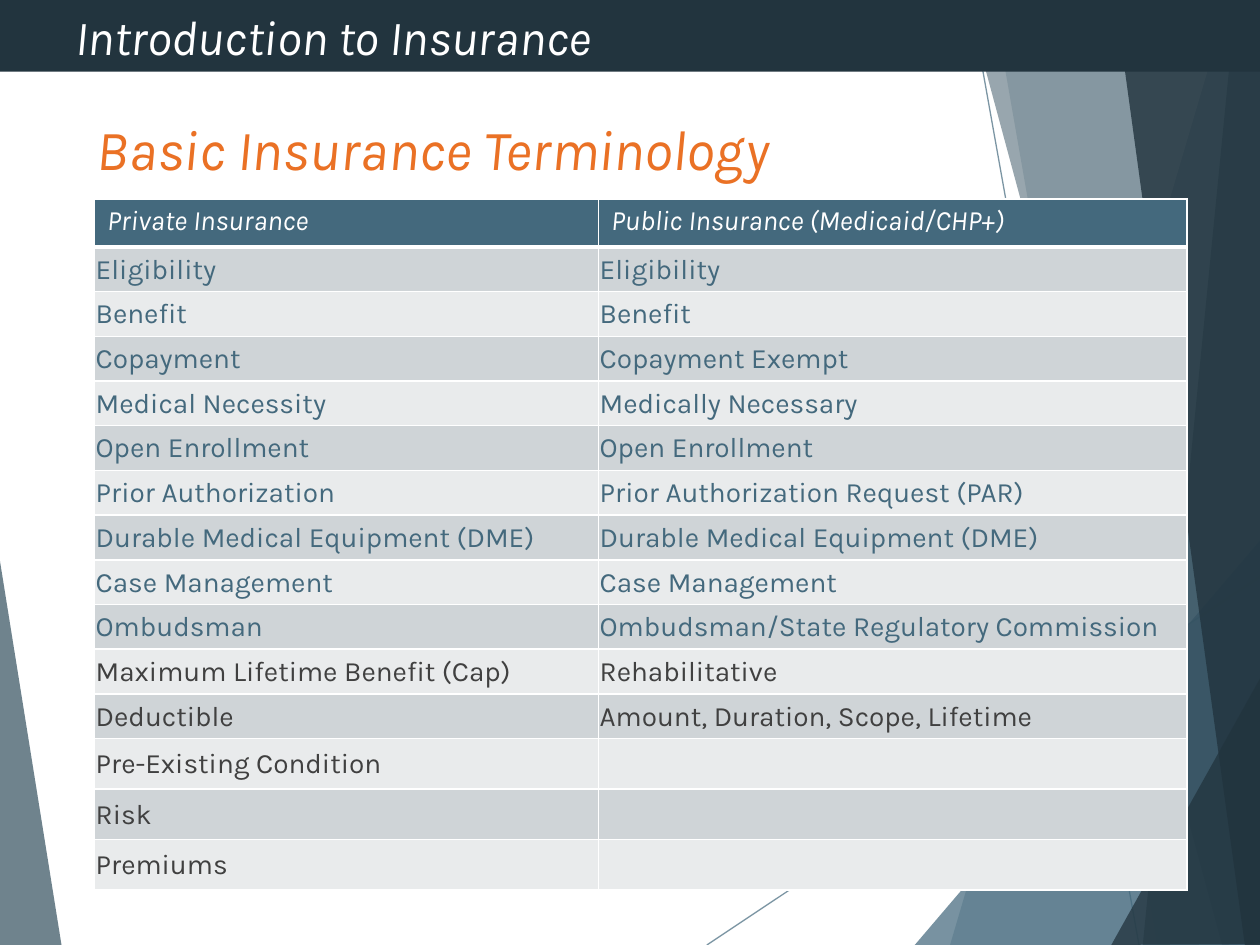
import pptx
import pptx.dml.color
import pptx.enum.shapes
import pptx.enum.text
import pptx.oxml
import pptx.oxml.ns
import pptx.util
from pptx.util import Inches

COLORS = {
    "slate": "44697D", "deep": "334F5E", "night": "22343E", "orange": "EA7125",
    "white": "FFFFFF", "gray": "404040", "band_dark": "CFD4D7", "band_light": "E9EBEC",
}
DRAWING_NS = pptx.oxml.ns.nsdecls("a")
MIDDLE = pptx.enum.text.MSO_ANCHOR.MIDDLE


def rgb(name):
    return pptx.dml.color.RGBColor.from_string(COLORS[name])


def write(frame, text, size, color, italic):
    run = frame.paragraphs[0].add_run()
    run.text = text
    look = {"name": "Karla", "size": pptx.util.Pt(size), "italic": italic, "bold": False}
    for attribute, value in look.items():
        setattr(run.font, attribute, value)
    run.font.color.rgb = rgb(color)


deck = pptx.Presentation()
deck.slide_width, deck.slide_height = Inches(10), Inches(7.5)
slide = deck.slides.add_slide(deck.slide_layouts[6])
shapes = slide.shapes

# Thin background lines
translucent = []
for x1, y1, x2, y2 in [(5.61, 7.5, 10.01, 4.57), (7.7, 0, 9.04, 7.5)]:
    ray = shapes.add_connector(pptx.enum.shapes.MSO_CONNECTOR.STRAIGHT,
                               Inches(x1), Inches(y1), Inches(x2), Inches(y2))
    ray.line.width = pptx.util.Pt(0.75)
    ray.line.color.rgb = rgb("slate")
    ray.element.spPr.append(pptx.oxml.parse_xml(f"<a:effectLst {DRAWING_NS}/>"))
    translucent.append((ray, 70))

# Translucent background facets: color, opacity in percent, corners
facets = [
    ("slate", 36, [(9.75, 0), (7.54, 7.5), (10.02, 7.51), (10.01, 0.01)]),
    ("slate", 20, [(7.88, -0.01), (9.19, 7.5), (10.01, 7.5), (10.01, -0.01)]),
    ("slate", 72, [(7.26, 7.5), (10, 4.29), (10.01, 7.5)]),
    ("deep", 50, [(7.67, -0.01), (9.7, 7.5), (10.01, 7.49), (10.01, -0.01)]),
    ("deep", 66, [(9.81, -0.01), (9.07, 7.5), (10.01, 7.5), (10, -0.01)]),
    ("night", 80, [(8.85, -0.01), (9.88, 7.5), (10.02, 7.5), (10, -0.01)]),
    ("night", 76, [(8.82, 7.5), (10.02, 5.35), (10.02, 7.49)]),
    ("deep", 70, [(-0.01, 4.39), (0.49, 7.51), (-0.01, 7.5)]),
]
for color, opacity, corners in facets:
    start, *others = [(Inches(x), Inches(y)) for x, y in corners]
    outline = shapes.build_freeform(*start)
    outline.add_line_segments(others, close=True)
    facet = outline.convert_to_shape()
    facet.shadow.inherit = False
    facet.fill.solid()
    facet.fill.fore_color.rgb = rgb(color)
    facet.line.fill.background()
    translucent.append((facet, opacity))

for part, opacity in translucent:
    for tint in part.element.xpath("./p:spPr//a:srgbClr"):
        tint.append(pptx.oxml.parse_xml(f'<a:alpha {DRAWING_NS} val="{opacity * 1000}"/>'))

# Banner
banner = shapes.add_shape(pptx.enum.shapes.MSO_SHAPE.RECTANGLE, 0, 0, Inches(10), Inches(0.57))
banner.shadow.inherit = False
banner.fill.solid()
banner.fill.fore_color.rgb = rgb("night")
banner.line.fill.background()
banner.text_frame.vertical_anchor = MIDDLE
banner.text_frame.margin_left = Inches(0.6)
banner.text_frame.paragraphs[0].alignment = pptx.enum.text.PP_ALIGN.LEFT
write(banner.text_frame, "Introduction to Insurance", 28, "white", True)

# Title
title = shapes.add_textbox(Inches(0.67), Inches(0.83), Inches(6.94), Inches(0.69))
title.text_frame.word_wrap = True
title.text_frame.vertical_anchor = MIDDLE
write(title.text_frame, "Basic Insurance Terminology", 32.4, "orange", True)

# Terminology table
terms = [
    ("Private Insurance", "Public Insurance (Medicaid/CHP+)"),
    ("Eligibility", "Eligibility"),
    ("Benefit", "Benefit"),
    ("Copayment", "Copayment Exempt"),
    ("Medical Necessity", "Medically Necessary"),
    ("Open Enrollment", "Open Enrollment"),
    ("Prior Authorization", "Prior Authorization Request (PAR)"),
    ("Durable Medical Equipment (DME)", "Durable Medical Equipment (DME)"),
    ("Case Management", "Case Management"),
    ("Ombudsman", "Ombudsman/State Regulatory Commission"),
    ("Maximum Lifetime Benefit (Cap)", "Rehabilitative"),
    ("Deductible", "Amount, Duration, Scope, Lifetime"),
    ("Pre-Existing Condition", ""),
    ("Risk", ""),
    ("Premiums", ""),
]
FIRST_GRAY_ROW = 10
body_format = {
    "vertical_anchor": MIDDLE, "margin_left": Inches(0.01), "margin_right": Inches(0.01),
    "margin_top": Inches(0.01), "margin_bottom": 0,
}
glossary = shapes.add_table(len(terms), 2, Inches(0.75), Inches(1.58),
                            Inches(8.67), Inches(5.42)).table
glossary.columns[0].width, glossary.columns[1].width = Inches(4), Inches(4.67)

for r, pair in enumerate(terms):
    is_header = r == 0
    glossary.rows[r].height = Inches(0.38 if is_header or not pair[1] else 0.355)
    if is_header:
        band, ink = "slate", "white"
    else:
        band = "band_dark" if r % 2 else "band_light"
        ink = "slate" if r < FIRST_GRAY_ROW else "gray"
    for c, term in enumerate(pair):
        cell = glossary.cell(r, c)
        cell.fill.solid()
        cell.fill.fore_color.rgb = rgb(band)
        if term:
            write(cell.text_frame, term, 16, ink, is_header)
            if not is_header:
                for attribute, value in body_format.items():
                    setattr(cell, attribute, value)
        # White cell borders, heavier under the header
        widths = {"L": 1, "R": 1, "T": 3 if r == 1 else 1, "B": 3 if is_header else 1}
        for position, (side, points) in enumerate(widths.items()):
            border = pptx.oxml.parse_xml(
                f'<a:ln{side} {DRAWING_NS} w="{pptx.util.Pt(points)}"><a:solidFill>'
                f'<a:srgbClr val="{COLORS["white"]}"/></a:solidFill></a:ln{side}>')
            cell.fill._xPr.insert(position, border)

deck.save("out.pptx")
